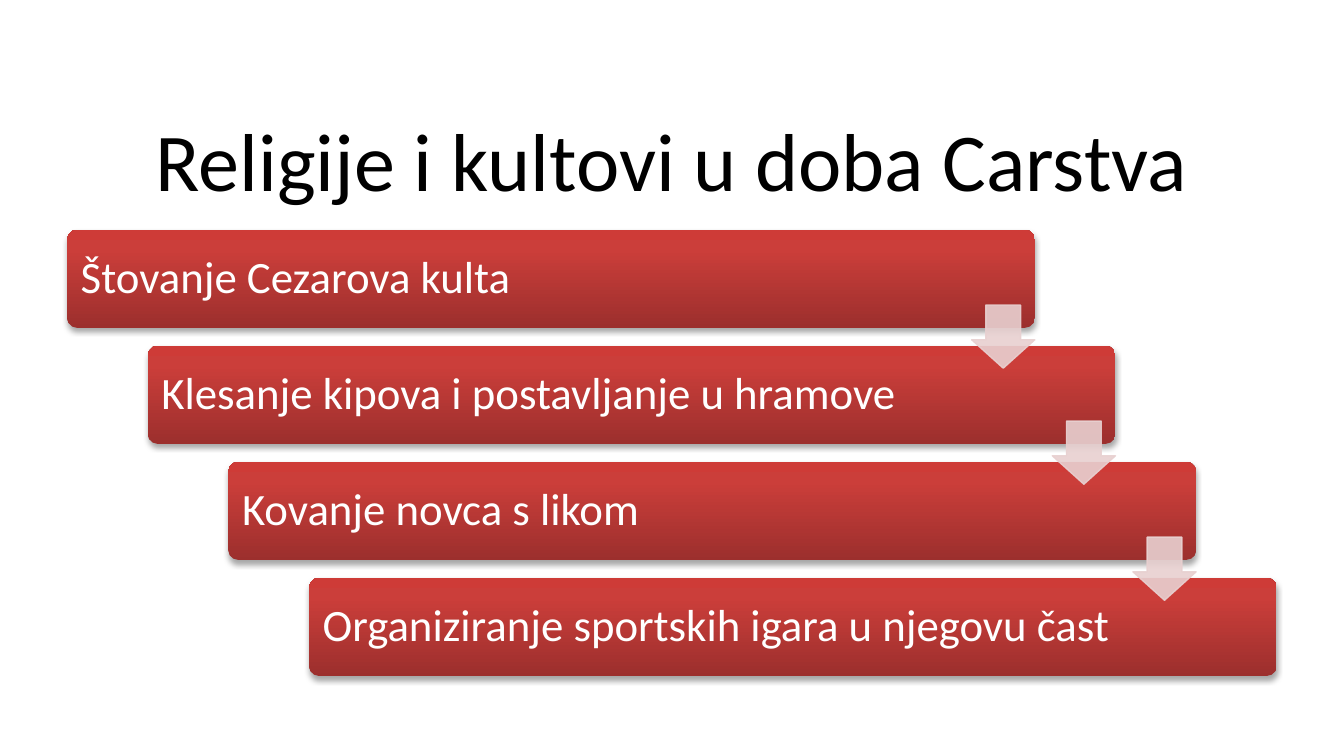
"""Build a slide with a descending staircase of four steps joined by arrows."""
import copy

import pptx
import pptx.dml.color
import pptx.enum.shapes
import pptx.enum.text
import pptx.oxml
import pptx.oxml.ns
import pptx.util

Inches = pptx.util.Inches
Pt = pptx.util.Pt
RGBColor = pptx.dml.color.RGBColor
MSO_SHAPE = pptx.enum.shapes.MSO_SHAPE
PP_ALIGN = pptx.enum.text.PP_ALIGN
MSO_ANCHOR = pptx.enum.text.MSO_ANCHOR
qn = pptx.oxml.ns.qn

BLACK = RGBColor(0x00, 0x00, 0x00)
WHITE = RGBColor(0xFF, 0xFF, 0xFF)
ARROW_PINK = RGBColor(0xE8, 0xD0, 0xD0)
BAR_GRADIENT = (
    (0, RGBColor(0x9C, 0x2F, 0x2D)),
    (0.8, RGBColor(0xCB, 0x3E, 0x3A)),
    (1, RGBColor(0xCE, 0x3B, 0x37)),
)

FONT = "Calibri"
TITLE = "Religije i kultovi u doba Carstva"
STEPS = (
    "Štovanje Cezarova kulta",
    "Klesanje kipova i postavljanje u hramove",
    "Kovanje novca s likom",
    "Organiziranje sportskih igara u njegovu čast",
)
BAR_LEFT, BAR_TOP, BAR_WIDTH, BAR_HEIGHT = 0.5, 1.71, 7.2, 0.73
LAST_LEFT, LAST_TOP = 2.3, 4.3
STEP_X = (LAST_LEFT - BAR_LEFT) / (len(STEPS) - 1)
STEP_Y = (LAST_TOP - BAR_TOP) / (len(STEPS) - 1)
ARROW_LEFT, ARROW_TOP, ARROW_SIZE = 7.23, 2.27, 0.47
SHADOW = (
    f'<a:outerShdw {pptx.oxml.ns.nsdecls("a")} blurRad="{Pt(3.1)}" dist="{Pt(1.8)}" '
    'dir="5400000" rotWithShape="0"><a:srgbClr val="000000"><a:alpha val="35000"/>'
    "</a:srgbClr></a:outerShdw>"
)


def write_text(shape, text, *, size, color, alignment=PP_ALIGN.LEFT, inset=0.08):
    """Put one formatted, vertically centred paragraph into a shape."""
    frame = shape.text_frame
    frame.text = text
    frame.word_wrap = True
    frame.auto_size = pptx.enum.text.MSO_AUTO_SIZE.NONE
    frame.vertical_anchor = MSO_ANCHOR.MIDDLE
    frame.margin_left = frame.margin_right = Inches(inset)
    frame.margin_top = frame.margin_bottom = Inches(inset)
    paragraph = frame.paragraphs[0]
    paragraph.alignment = alignment
    paragraph.line_spacing = 0.9
    paragraph.font.name = FONT
    paragraph.font.size = Pt(size)
    paragraph.font.color.rgb = color


def add_title(slide):
    """Place and format the title placeholder."""
    title = slide.shapes.title
    title.left, title.top = Inches(0.5), Inches(0.84)
    title.width, title.height = Inches(9), Inches(0.78)
    write_text(title, TITLE, size=44, color=BLACK, alignment=PP_ALIGN.CENTER, inset=0.05)


def apply_gradient(shape, stops):
    """Fill a shape from bottom to top with three colour stops."""
    shape.fill.gradient()
    shape.fill.gradient_angle = 90
    stop_list = shape.element.spPr.find(qn("a:gradFill")).find(qn("a:gsLst"))
    stop_list.append(copy.deepcopy(stop_list[-1]))
    for stop, (position, color) in zip(shape.fill.gradient_stops, stops):
        stop.position = position
        stop.color.rgb = color


def add_bar(slide, index, text):
    """Add one step bar with its gradient, shadow and text."""
    bar = slide.shapes.add_shape(
        MSO_SHAPE.ROUNDED_RECTANGLE,
        Inches(BAR_LEFT + index * STEP_X), Inches(BAR_TOP + index * STEP_Y),
        Inches(BAR_WIDTH), Inches(BAR_HEIGHT),
    )
    bar.adjustments[0] = 0.1
    apply_gradient(bar, BAR_GRADIENT)
    bar.line.fill.background()
    bar.shadow.inherit = False
    bar.element.spPr.find(qn("a:effectLst")).append(pptx.oxml.parse_xml(SHADOW))
    write_text(bar, text, size=24, color=WHITE)


def add_arrow(slide, index):
    """Add the translucent arrow from one step to the next."""
    arrow = slide.shapes.add_shape(
        MSO_SHAPE.DOWN_ARROW,
        Inches(ARROW_LEFT + index * STEP_X), Inches(ARROW_TOP + index * STEP_Y),
        Inches(ARROW_SIZE), Inches(ARROW_SIZE),
    )
    arrow.adjustments[0] = 0.55
    arrow.adjustments[1] = 0.45
    arrow.fill.solid()
    arrow.fill.fore_color.rgb = ARROW_PINK
    arrow.line.color.rgb = ARROW_PINK
    arrow.line.width = Pt(0.75)
    arrow.shadow.inherit = False
    for color in arrow.element.spPr.iter(qn("a:srgbClr")):
        alpha = color.makeelement(qn("a:alpha"), {"val": "90000"})
        color.append(alpha)


def main():
    """Create and save the presentation."""
    presentation = pptx.Presentation()
    presentation.slide_width = Inches(10)
    presentation.slide_height = presentation.slide_width * 9 // 16
    slide = presentation.slides.add_slide(presentation.slide_layouts[5])
    add_title(slide)
    for index, text in enumerate(STEPS):
        add_bar(slide, index, text)
    for index in range(len(STEPS) - 1):
        add_arrow(slide, index)
    presentation.save("out.pptx")


if __name__ == "__main__":
    main()
